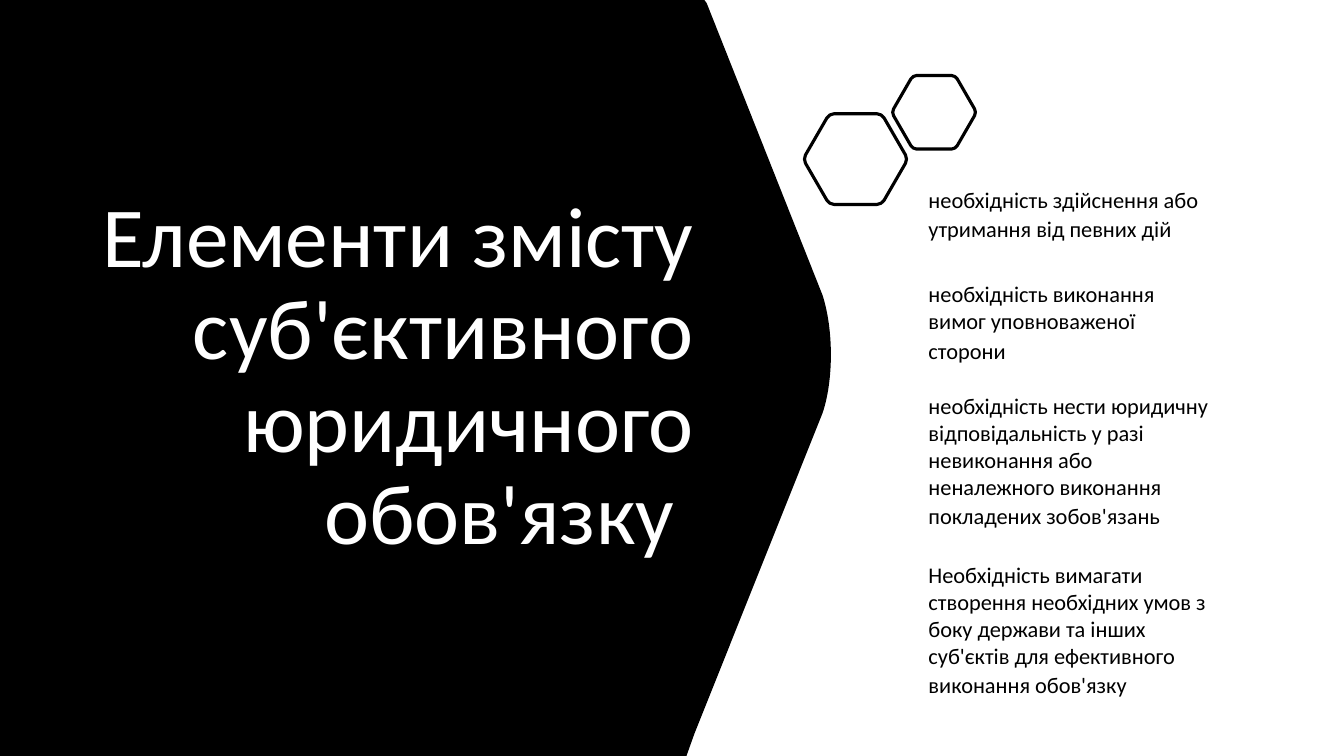
from dataclasses import dataclass
from itertools import chain
from math import cos, pi, sin

from pptx import Presentation
from pptx.dml.color import RGBColor
from pptx.enum import text
from pptx.oxml.ns import qn
from pptx.util import Cm, Pt

BLACK = RGBColor(0, 0, 0)
WHITE = RGBColor(255, 255, 255)
FONT = "Calibri"
UNITS_PER_CM = 1000
CORNER_CUT = 0.09
CORNER_PULL = 0.55

Point = tuple[float, float]
Segment = list[Point]


@dataclass
class Hexagon:
    x: float
    y: float
    radius: float


@dataclass
class Duty:
    top: float
    height: float
    text: str


HEXAGONS = [Hexagon(21.56, 4.01, 1.32), Hexagon(23.54, 2.83, 1.07)]

DUTIES = [
    Duty(4.56, 1.7, "необхідність здійснення або утримання від певних дій"),
    Duty(6.94, 2.39, "необхідність виконання вимог уповноваженої сторони"),
    Duty(9.76, 3.76, "необхідність нести юридичну відповідальність у разі "
                     "невиконання або неналежного виконання покладених "
                     "зобов'язань"),
    Duty(14.02, 3.76, "Необхідність вимагати створення необхідних умов з боку "
                      "держави та інших суб'єктів для ефективного виконання "
                      "обов'язку"),
]

PANEL: list[Segment] = [
    [(17.75, 0)],
    [(17.81, 0.08)],
    [(20.73, 7.44)],
    [(21.01, 8.31), (21.01, 9.58), (20.73, 10.41)],
    [(17.5, 18.49)],
    [(17.3, 19.05)],
    [(0, 19.05)],
]


def between(a: Point, b: Point, t: float) -> Point:
    return a[0] + (b[0] - a[0]) * t, a[1] + (b[1] - a[1]) * t


def hexagon_segments(hexagon: Hexagon) -> list[Segment]:
    corners = [(hexagon.x + hexagon.radius * cos(i * pi / 3),
                hexagon.y + hexagon.radius * sin(i * pi / 3)) for i in range(6)]
    segments = []
    for i, corner in enumerate(corners):
        enter = between(corner, corners[i - 1], CORNER_CUT)
        leave = between(corner, corners[(i + 1) % 6], CORNER_CUT)
        segments.append([enter])
        segments.append([between(enter, corner, CORNER_PULL),
                         between(leave, corner, CORNER_PULL), leave])
    return segments


def add_outline(s, start: Point, segments: list[Segment]):
    scaled = [(x * UNITS_PER_CM, y * UNITS_PER_CM)
              for x, y in chain([start], *segments)]
    builder = s.shapes.build_freeform(*scaled[0], scale=Cm(1) / UNITS_PER_CM)
    builder.add_line_segments(scaled[1:], close=True)
    sp = builder.convert_to_shape()
    sp.shadow.inherit = False
    lines = iter(list(sp._element.iter(qn("a:lnTo"))))
    for segment in segments:
        first, *others = [next(lines) for _ in segment]
        if others:
            first.tag = qn("a:cubicBezTo")
        for other in others:
            first.append(other[0])
            other.getparent().remove(other)
    return sp


def add_panel(s) -> None:
    sp = add_outline(s, (0, 0), PANEL)
    sp.fill.solid()
    sp.fill.fore_color.rgb = BLACK
    sp.line.fill.background()


def add_hexagon(s, hexagon: Hexagon) -> None:
    (start,), *segments = hexagon_segments(hexagon)
    sp = add_outline(s, start, segments)
    sp.fill.background()
    sp.line.color.rgb = BLACK
    sp.line.width = Pt(2.25)


def add_text(s, left: float, top: float, width: float, height: float,
             content: str, size: float, color: RGBColor):
    sp = s.shapes.add_textbox(Cm(left), Cm(top), Cm(width), Cm(height))
    tf = sp.text_frame
    tf.word_wrap = True
    p = tf.paragraphs[0]
    p.text = content
    r = p.runs[0]
    r.font.name = FONT
    r.font.size = Pt(size)
    r.font.color.rgb = color
    return tf


def add_title(s) -> None:
    tf = add_text(s, 1.5, 3.54, 16.23, 11.99,
                  "Елементи змісту суб'єктивного юридичного обов'язку ", 61, WHITE)
    tf.vertical_anchor = text.MSO_ANCHOR.MIDDLE
    p = tf.paragraphs[0]
    p.alignment = text.PP_ALIGN.RIGHT
    p.line_spacing = 0.9


def add_duty(s, duty: Duty) -> None:
    tf = add_text(s, 23.15, duty.top, 7.62, duty.height, duty.text, 16, BLACK)
    tf.auto_size = text.MSO_AUTO_SIZE.SHAPE_TO_FIT_TEXT
    r = tf.paragraphs[0].add_run()
    r.text = " "
    r.font.name = FONT
    r.font.size = Pt(18)
    r.font.color.rgb = BLACK


def main() -> None:
    prs = Presentation()
    prs.slide_width, prs.slide_height = Cm(33.87), Cm(19.05)
    s = prs.slides.add_slide(prs.slide_layouts[6])
    add_panel(s)
    for hexagon in HEXAGONS:
        add_hexagon(s, hexagon)
    add_title(s)
    for duty in DUTIES:
        add_duty(s, duty)
    prs.save("out.pptx")


if __name__ == "__main__":
    main()
